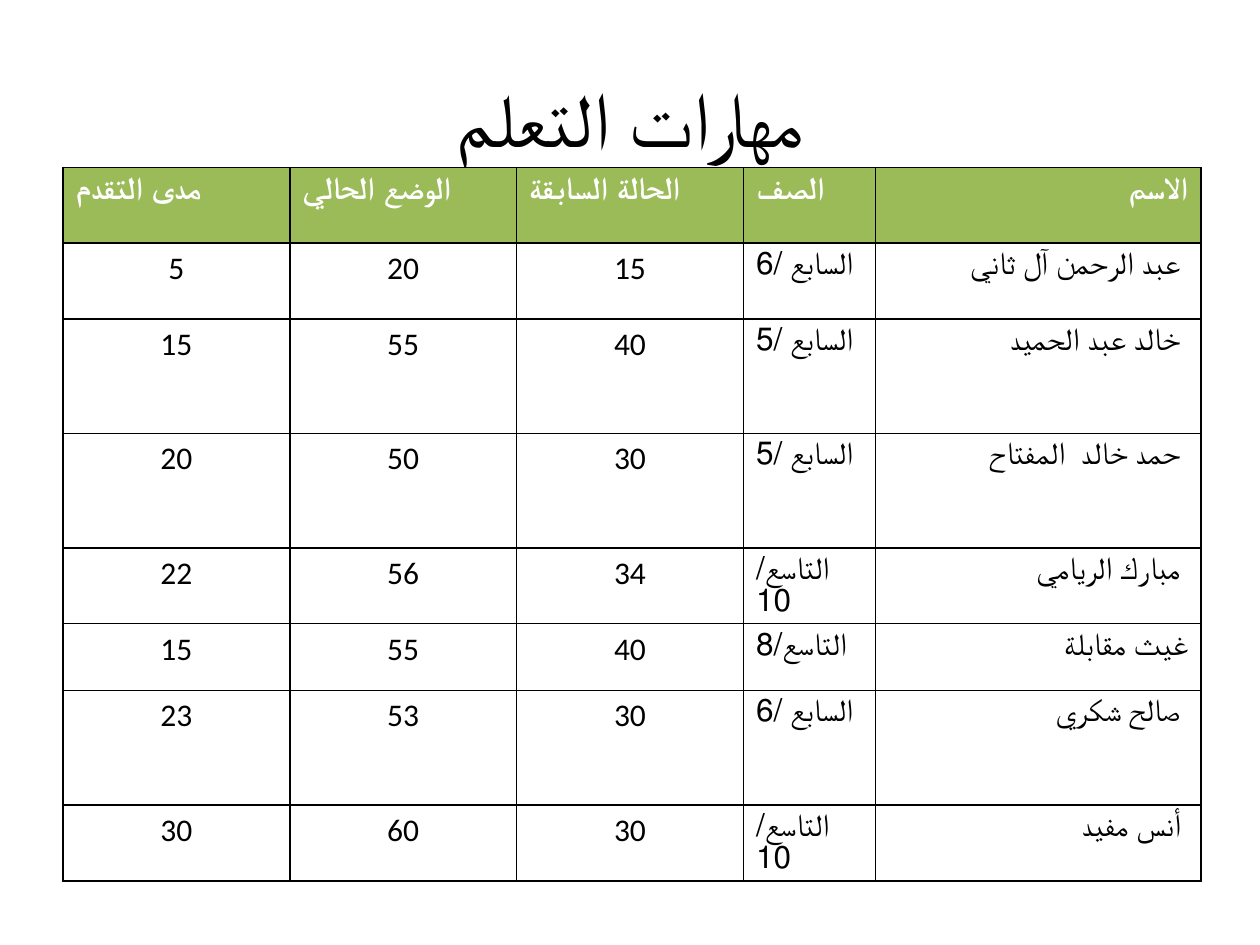
from lxml.etree import SubElement
from pptx import Presentation
from pptx.dml.color import RGBColor
from pptx.enum.text import MSO_ANCHOR, PP_ALIGN
from pptx.oxml.ns import qn
from pptx.util import Inches, Pt

TITLE = "مهارات التعلم"
HEAD = ("مدى التقدم", "الوضع الحالي", "الحالة السابقة", "الصف", "الاسم")
ROWS = [
    ("5", "20", "15", "السابع /6", "عبد الرحمن آل ثاني "),
    ("15", "55", "40", "السابع /5", "خالد عبد الحميد "),
    ("20", "50", "30", "السابع /5", "حمد خالد  المفتاح "),
    ("22", "56", "34", "التاسع/10", "مبارك الريامي "),
    ("15", "55", "40", "التاسع/8", "غيث مقابلة"),
    ("23", "53", "30", "السابع /6", "صالح شكري "),
    ("30", "60", "30", "التاسع/10", "أنس مفيد "),
]
WIDTHS = (1.8, 1.8, 1.8, 1.05, 2.58)
HEIGHTS = (0.6, 0.6, 0.91, 0.91, 0.6, 0.53, 0.91, 0.6)
COLORS = {"ink": "000000", "paper": "FFFFFF", "head": "9BBB59"}
LEFT, CENTER, RIGHT = PP_ALIGN.LEFT, PP_ALIGN.CENTER, PP_ALIGN.RIGHT
HEAD_ALIGN = (LEFT, LEFT, LEFT, LEFT, RIGHT)
BODY_ALIGN = (CENTER, CENTER, CENTER, LEFT, RIGHT)


def write(frame, text, size=18, color="ink", bold=False, align=LEFT, lead=None):
    """Fill a text frame with one formatted paragraph."""
    para = frame.paragraphs[0]
    para.alignment = align
    if lead:
        para.line_spacing = Pt(lead)
    run = para.add_run()
    run.text = text
    font = run.font
    font.name, font.size, font.bold = "Calibri", Pt(size), bold
    font.color.rgb = RGBColor.from_string(COLORS[color])


def paint(cell, fill):
    """Give a cell its borders and fill."""
    props = cell._tc.get_or_add_tcPr()
    for side in ("lnL", "lnR", "lnT", "lnB"):
        line = SubElement(props, qn(f"a:{side}"), w=str(Pt(1)))
        solid = SubElement(line, qn("a:solidFill"))
        SubElement(solid, qn("a:srgbClr"), val=COLORS["ink"])
    cell.fill.solid()
    cell.fill.fore_color.rgb = RGBColor.from_string(COLORS[fill])


def main():
    """Build the skills slide."""
    deck = Presentation()
    deck.slide_width, deck.slide_height = Inches(10), Inches(7.5)
    slide = deck.slides.add_slide(deck.slide_layouts[5])
    title = slide.shapes.title
    title.left, title.top = Inches(0.5), Inches(0.3)
    title.width, title.height = Inches(9), Inches(1.25)
    title.text_frame.vertical_anchor = MSO_ANCHOR.MIDDLE
    write(title.text_frame, TITLE, size=44, align=CENTER)

    grid = slide.shapes.add_table(
        len(HEIGHTS), len(WIDTHS), Inches(0.5), Inches(1.33),
        Inches(sum(WIDTHS)), Inches(sum(HEIGHTS))).table
    for col, width in zip(grid.columns, WIDTHS):
        col.width = Inches(width)
    for row, height in zip(grid.rows, HEIGHTS):
        row.height = Inches(height)
    for r, texts in enumerate([HEAD, *ROWS]):
        top = r == 0
        for c, text in enumerate(texts):
            cell = grid.cell(r, c)
            paint(cell, "head" if top else "paper")
            write(cell.text_frame, text, bold=top,
                  color="paper" if top else "ink",
                  align=(HEAD_ALIGN if top else BODY_ALIGN)[c],
                  lead=None if text.isdigit() else 18)
    deck.save("out.pptx")


if __name__ == "__main__":
    main()
